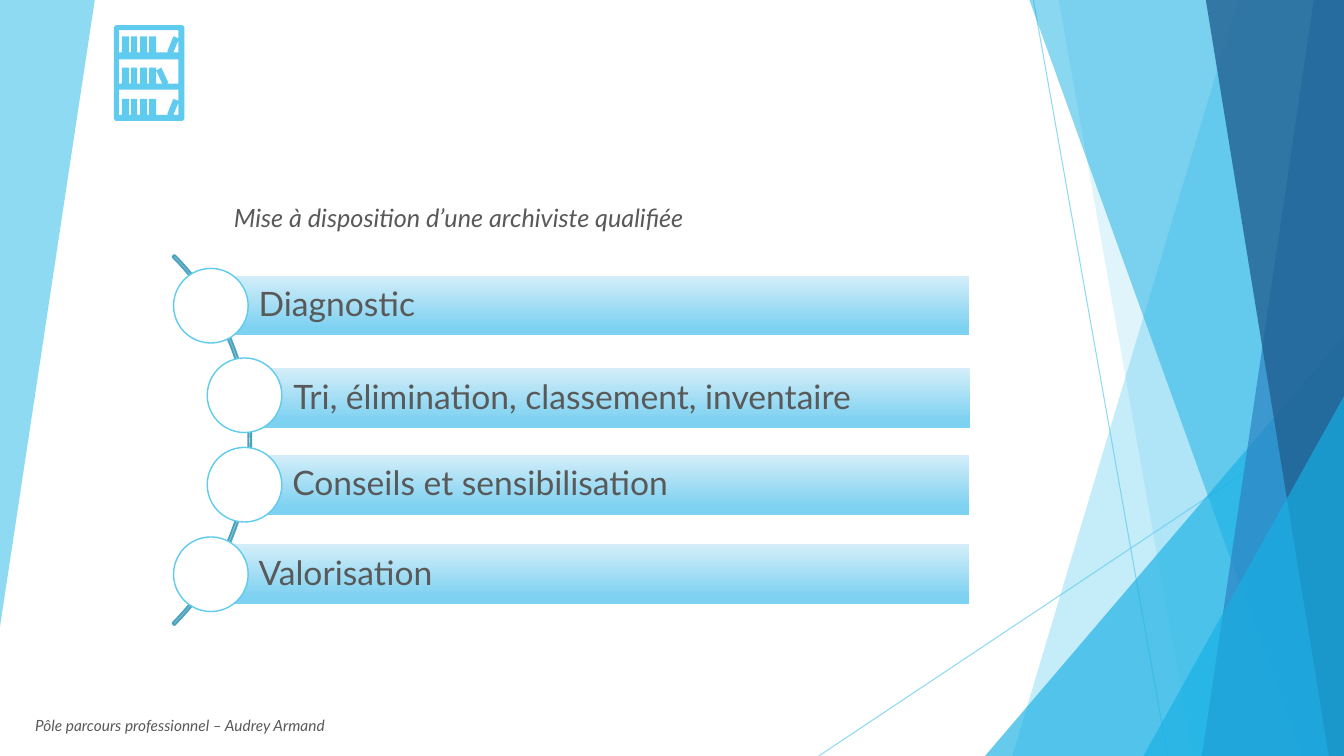
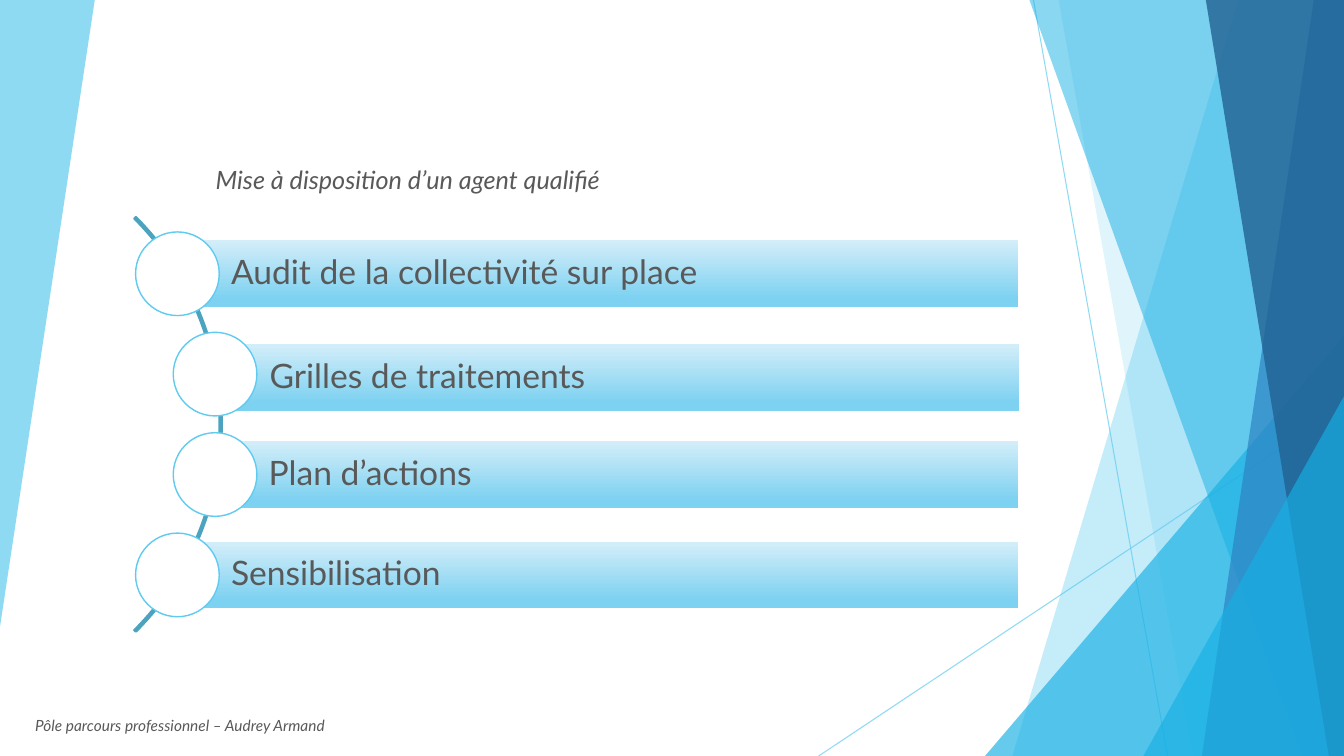
import math

import lxml.etree
import pptx
import pptx.dml.color
import pptx.enum.shapes
import pptx.enum.text
import pptx.oxml.ns
import pptx.util

THEME = {
    "sky": "5FCBEF", "azure": "17B0E4", "blue": "2E83C3", "navy": "226292",
    "arc": "4CA3BF", "bar": (("D4EEF9", 0), ("7DD1F1", 0.88)),
    "white": "FFFFFF", "text": "595959", "font": "Lato",
    "subtitle": 18, "step": 24, "footer": 11,
}
WIDTH, HEIGHT = 13.33, 7.5
FOOTER = "Pôle parcours professionnel – Audrey Armand"
SLIDES = [
    {
        "subtitle": "Mise à disposition d’une archiviste qualifiée",
        "subtitle_box": (2.22, 1.96, 6.19, 0.47),
        "steps": ["Diagnostic", "Tri, élimination, classement, inventaire",
                  "Conseils et sensibilisation", "Valorisation"],
        "arc_box": (-2.7, 1.77, 5.19), "arc_share": 0.005,
        "marker": 0.74, "bar_right": 9.61, "bookcase": True,
    },
    {
        "subtitle": "Mise à disposition d’un agent qualifié",
        "subtitle_box": (2.04, 1.58, 4.6, 0.47),
        "steps": ["Audit de la collectivité sur place", "Grilles de traitements",
                  "Plan d’actions", "Sensibilisation"],
        "arc_box": (-3.62, 1.3, 5.82), "arc_share": 0.004,
        "marker": 0.83, "bar_right": 10.1, "bookcase": False,
    },
]
NUDGED_STEP, NUDGE = 1, (0.01, 0.03)

LEFT_FACET = [(0, 0), (0.94, 0), (0, 6.22)]
RAYS = [(10.25, 0, 11.58, HEIGHT), (WIDTH, 4.03, 8.12, HEIGHT)]
RIGHT_FACETS = [
    ("band", 12.28, 10.04, "sky", 36),
    ("band", 10.5, 11.83, "sky", 20),
    ("peak", 9.77, 3.33, "azure", 66),
    ("band", 10.21, 12.91, "azure", 50),
    ("band", 13.03, 11.92, "blue", 70),
    ("band", 11.96, 13.18, "navy", 80),
    ("peak", 11.34, 3.93, "azure", 66),
]

BOOKCASE = (1.13, 0.25, 1.83, 1.2)
SHELF_LEFT, SHELF_RIGHT = 1.18, 1.77
SHELVES = [(0.3, 0.36, 0.52, "right"), (0.59, 0.67, 0.83, "left"), (0.89, 0.98, 1.14, "right")]
BOOKS = [(1.21, 1.28), (1.3, 1.36), (1.39, 1.46), (1.48, 1.55)]

PRESET = pptx.enum.shapes.MSO_SHAPE
qn = pptx.oxml.ns.qn


def inches(*values):
    return [pptx.util.Inches(value) for value in values]


def rgb(color):
    return pptx.dml.color.RGBColor.from_string(color)


def apply(target, values):
    for name, value in values.items():
        setattr(target, name, value)


def set_opacity(shape, percent):
    for color in shape._element.spPr.iter(qn("a:srgbClr")):
        lxml.etree.SubElement(color, qn("a:alpha")).set("val", str(percent * 1000))


def paint(shape, fill=None, line=None, weight=1, opacity=None):
    shape.shadow.inherit = False
    if fill:
        shape.fill.solid()
        shape.fill.fore_color.rgb = rgb(fill)
    else:
        shape.fill.background()
    if line:
        shape.line.color.rgb = rgb(line)
        shape.line.width = pptx.util.Pt(weight)
    else:
        shape.line.fill.background()
    if opacity:
        set_opacity(shape, opacity)


def write(shape, text, size, italic=False, frame_format=None, spacing=None):
    frame = shape.text_frame
    apply(frame, {"word_wrap": True, **(frame_format or {})})
    paragraph = frame.paragraphs[0]
    apply(paragraph, {"alignment": pptx.enum.text.PP_ALIGN.LEFT, "line_spacing": spacing})
    run = paragraph.add_run()
    run.text = text
    apply(run.font, {"name": THEME["font"], "size": pptx.util.Pt(size), "italic": italic})
    run.font.color.rgb = rgb(THEME["text"])


def add_outline(slide, contours):
    builder = None
    for contour in contours:
        start, *others = [inches(*point) for point in contour]
        if builder is None:
            builder = slide.shapes.build_freeform(*start, scale=1.0)
        else:
            builder.move_to(*start)
        builder.add_line_segments(others, close=True)
    return builder.convert_to_shape()


def add_facets(slide):
    paint(add_outline(slide, [LEFT_FACET]), THEME["sky"], opacity=70)
    for ray_ends in RAYS:
        ray = slide.shapes.add_connector(
            pptx.enum.shapes.MSO_CONNECTOR.STRAIGHT, *inches(*ray_ends))
        ray.line.color.rgb = rgb(THEME["sky"])
        ray.line.width = pptx.util.Pt(0.75)
        set_opacity(ray, 70)
        lxml.etree.SubElement(ray._element.spPr, qn("a:effectLst"))
    for kind, first, second, color, opacity in RIGHT_FACETS:
        if kind == "band":
            facet = add_outline(slide, [[(first, 0), (WIDTH, 0), (WIDTH, HEIGHT), (second, HEIGHT)]])
        else:
            facet = slide.shapes.add_shape(
                PRESET.ISOSCELES_TRIANGLE, *inches(first, second, WIDTH - first, HEIGHT - second))
            facet.adjustments[0] = 1
        paint(facet, THEME[color], opacity=opacity)


def add_steps(slide, content):
    arc_left, arc_top, arc_size = content["arc_box"]
    arc = slide.shapes.add_shape(
        PRESET.BLOCK_ARC, *inches(arc_left, arc_top, arc_size, arc_size))
    for index, value in enumerate((189, 27, content["arc_share"])):
        arc.adjustments[index] = value
    paint(arc, line=THEME["arc"], weight=1.5)

    marker = content["marker"]
    bar_height, pitch = 0.8 * marker, 1.2 * marker
    inner_radius = arc_size * (0.5 - content["arc_share"])
    pad = pptx.util.Inches(0.07)
    bar_format = {
        "vertical_anchor": pptx.enum.text.MSO_ANCHOR.MIDDLE,
        "margin_left": pptx.util.Inches(0.8 * bar_height),
        "margin_right": pad, "margin_top": pad, "margin_bottom": pad,
    }
    middle = (len(content["steps"]) - 1) / 2
    for index, step in enumerate(content["steps"]):
        rise = (index - middle) * pitch
        center_x = arc_left + arc_size / 2 + math.sqrt(inner_radius ** 2 - rise ** 2)
        center_y = arc_top + arc_size / 2 + rise
        shift_x, shift_y = NUDGE if index == NUDGED_STEP else (0, 0)
        bar = slide.shapes.add_shape(PRESET.RECTANGLE, *inches(
            center_x + shift_x, center_y - bar_height / 2 + shift_y,
            content["bar_right"] - center_x, bar_height))
        paint(bar)
        bar.fill.gradient()
        bar.fill.gradient_angle = 270
        for stop, (color, position) in zip(bar.fill.gradient_stops, THEME["bar"]):
            stop.color.rgb = rgb(color)
            stop.position = position
        write(bar, step, THEME["step"], frame_format=bar_format, spacing=0.9)
        circle = slide.shapes.add_shape(PRESET.OVAL, *inches(
            center_x - marker / 2, center_y - marker / 2, marker, marker))
        paint(circle, THEME["white"], THEME["sky"])


def add_bookcase(slide):
    left, top, right, bottom = BOOKCASE
    cut = 0.02
    contours = [[
        (left + cut, top), (right - cut, top), (right, top + cut), (right, bottom - cut),
        (right - cut, bottom), (left + cut, bottom), (left, bottom - cut), (left, top + cut),
    ]]
    for ceiling, book_top, floor, lean in SHELVES:
        opening = [(SHELF_LEFT, ceiling), (SHELF_LEFT, floor)]
        for start, end in BOOKS:
            opening += [(start, floor), (start, book_top), (end, book_top), (end, floor)]
        if lean == "right":
            opening += [(1.67, floor), (1.66, floor - 0.01), (1.72, book_top),
                        (SHELF_RIGHT, book_top + 0.02)]
            contours.append([(SHELF_RIGHT, floor - 0.12), (1.72, floor), (SHELF_RIGHT, floor)])
        else:
            opening += [(1.61, floor), (1.55, book_top + 0.03), (1.6, book_top),
                        (1.67, floor - 0.01), (1.65, floor), (SHELF_RIGHT, floor)]
        contours.append(opening + [(SHELF_RIGHT, ceiling)])
    paint(add_outline(slide, contours), THEME["sky"])


def add_note(slide, box, text, size):
    write(slide.shapes.add_textbox(*inches(*box)), text, size, italic=True)


def main():
    deck = pptx.Presentation()
    deck.slide_width, deck.slide_height = inches(WIDTH, HEIGHT)
    for content in SLIDES:
        slide = deck.slides.add_slide(deck.slide_layouts[6])
        add_facets(slide)
        add_note(slide, content["subtitle_box"], content["subtitle"], THEME["subtitle"])
        add_steps(slide, content)
        add_note(slide, (0.25, 7.06, 3.75, 0.29), FOOTER, THEME["footer"])
        if content["bookcase"]:
            add_bookcase(slide)
    deck.save("out.pptx")


if __name__ == "__main__":
    main()
